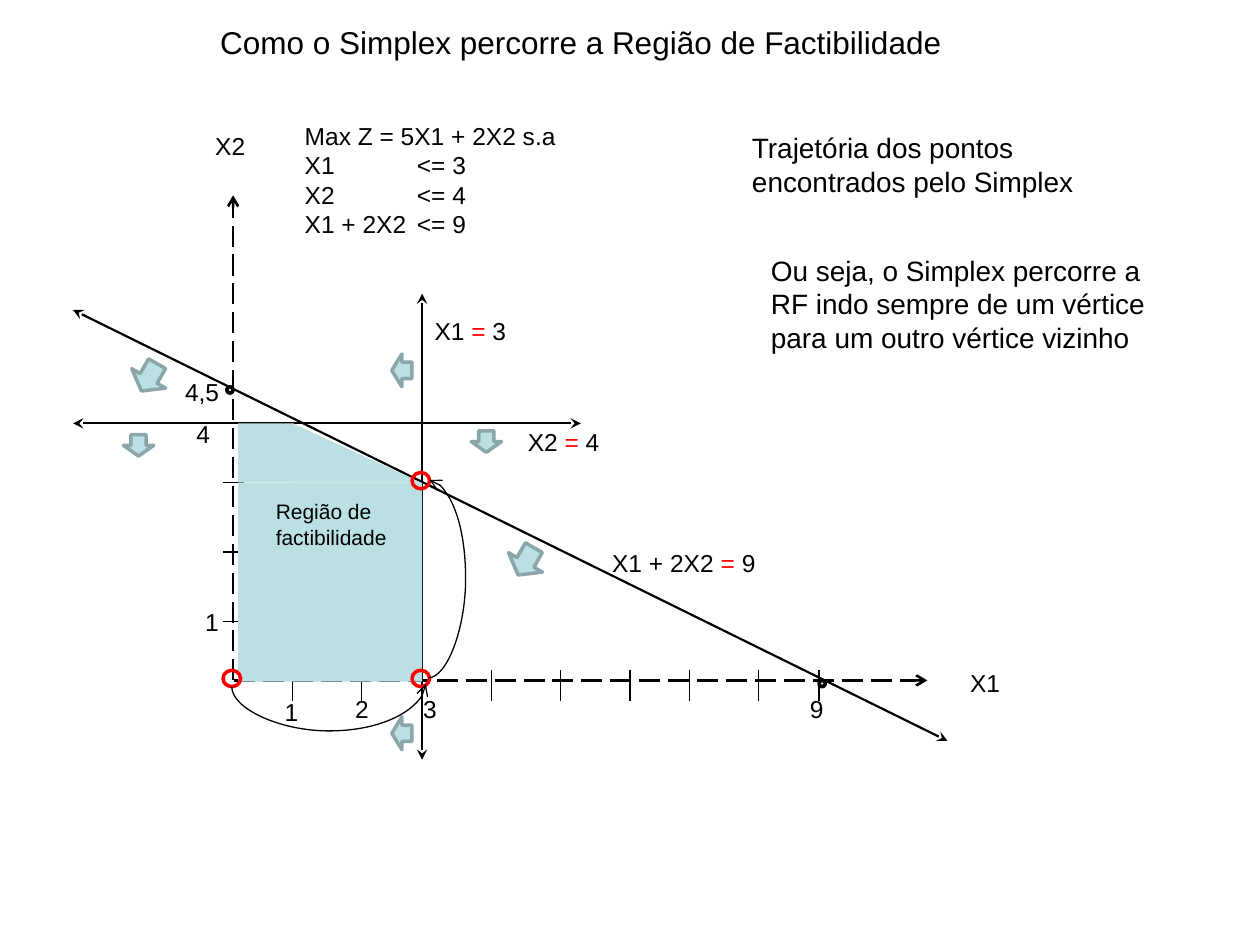
from lxml.etree import SubElement
from pptx import Presentation
from pptx.dml.color import RGBColor
from pptx.enum.dml import MSO_LINE
from pptx.enum.shapes import MSO_CONNECTOR, MSO_SHAPE
from pptx.enum.text import PP_ALIGN
from pptx.oxml.ns import qn
from pptx.util import Inches, Pt

BLACK, RED, AQUA, TEAL = "000000", "FF0000", "BBE0E3", "8AA6A8"

prs = Presentation()
prs.slide_width, prs.slide_height = Inches(10), Inches(7.5)
slide = prs.slides.add_slide(prs.slide_layouts[6])
rgb = RGBColor.from_string


def add_line(start, end, width, head=None, tail=None, kind=MSO_CONNECTOR.STRAIGHT):
    connector = slide.shapes.add_connector(kind, *map(Inches, (*start, *end)))
    connector.line.color.rgb = rgb(BLACK)
    connector.line.width = Pt(width)
    for tag, arrow in (("a:headEnd", head), ("a:tailEnd", tail)):
        if arrow:
            SubElement(connector.line._get_or_add_ln(), qn(tag), type=arrow)
    SubElement(connector._element.spPr, qn("a:effectLst"))
    return connector


def add_figure(preset, box, fill=None, outline=None):
    figure = slide.shapes.add_shape(preset, *map(Inches, box))
    figure.shadow.inherit = False
    if fill:
        figure.fill.solid()
        figure.fill.fore_color.rgb = rgb(fill)
    else:
        figure.fill.background()
    if outline:
        figure.line.color.rgb = rgb(outline)
        figure.line.width = Pt(2)
    else:
        figure.line.fill.background()
    return figure


for start, end in (((1.85, 5.4), (1.85, 1.55)), ((1.86, 5.4), (7.36, 5.4))):
    axis = add_line(start, end, 1.5, tail="arrow")
    axis.line.dash_style = MSO_LINE.LONG_DASH

for x in (2.32, 2.87, 3.35, 3.9, 4.45, 5, 5.47, 6.02, 6.5):
    add_line((x, 5.32), (x, 5.56), 0.75)
for y in (4.93, 4.38, 3.83, 3.36):
    add_line((1.77, y), (1.94, y), 0.75)

for start, end in (
    ((3.35, 2.33), (3.35, 6.03)),
    ((4.61, 3.36), (0.58, 3.36)),
    ((0.58, 2.46), (7.52, 5.88)),
):
    add_line(start, end, 1.25, "stealth", "stealth")

for left, top in ((1.8, 3.07), (6.5, 5.4)):
    add_figure(MSO_SHAPE.OVAL, (left, top, 0.05, 0.05), AQUA, BLACK)

for left, top in ((0.98, 3.45), (3.74, 3.42)):
    add_figure(MSO_SHAPE.DOWN_ARROW, (left, top, 0.24, 0.17), AQUA, TEAL)
for top in (2.81, 5.69):
    add_figure(MSO_SHAPE.LEFT_ARROW, (3.11, top, 0.16, 0.26), AQUA, TEAL)
for left, top in ((4.02, 4.33), (1.03, 2.87)):
    oblique = add_figure(MSO_SHAPE.DOWN_ARROW, (left, top, 0.31, 0.25), AQUA, TEAL)
    oblique.rotation = 29.8
    oblique.adjustments[1] = 0.46

for preset, box in (
    (MSO_SHAPE.RECTANGLE, (1.89, 3.83, 1.46, 1.58)),
    (MSO_SHAPE.RECTANGLE, (1.89, 3.36, 0.44, 0.47)),
    (MSO_SHAPE.RIGHT_TRIANGLE, (2.32, 3.36, 1.02, 0.47)),
):
    add_figure(preset, box, AQUA)

for left, top in ((1.77, 5.32), (3.27, 5.32), (3.27, 3.75)):
    add_figure(MSO_SHAPE.OVAL, (left, top, 0.14, 0.13), outline=RED)

for start, end, bend, turn in (
    ((2.62, 6.21), (2.6, 4.67), -1750000, 90),
    ((3.4, 5.38), (3.41, 3.81), 3000000, 0),
):
    path_step = add_line(start, end, 0.75, tail="arrow", kind=MSO_CONNECTOR.CURVE)
    properties = path_step._element.spPr
    properties.find(qn("a:xfrm")).set("rot", str(turn * 60000))
    guides = properties.find(qn("a:prstGeom")).get_or_add_avLst()
    SubElement(guides, qn("a:gd"), name="adj1", fmla=f"val {bend}")

texts = [
    ((7.6, 5.25, 0.55, 0.34), 14, ["X1"]),
    ((1.61, 0.99, 0.55, 0.34), 14, ["X2"]),
    ((2.32, 0.91, 2.6, 1.04), 14,
     ["Max Z = 5X1 + 2X2 s.a", "X1\t<= 3", "X2\t<= 4", "X1 + 2X2\t<= 9"]),
    ((2.16, 5.48, 0.32, 0.34), 14, ["1"]),
    ((2.72, 5.46, 0.32, 0.34), 14, ["2"]),
    ((3.26, 5.46, 0.32, 0.34), 14, ["3"]),
    ((6.33, 5.46, 0.32, 0.34), 14, ["9"]),
    ((1.53, 4.77, 0.32, 0.34), 14, ["1"]),
    ((1.46, 3.28, 0.32, 0.34), 14, ["4"]),
    ((1.37, 2.94, 0.48, 0.34), 14, ["4,5"]),
    ((2.09, 3.91, 1.08, 0.51), 12, ["Região de factibilidade"]),
    ((5.87, 0.99, 3.54, 0.64), 16, ["Trajetória dos pontos encontrados pelo Simplex"]),
    ((0.81, 0.13, 7.6, 0.4), 18, ["Como o Simplex percorre a Região de Factibilidade"]),
    ((6.02, 1.96, 3.39, 1.21), 16,
     ["Ou seja, o Simplex percorre a RF indo sempre de um vértice para um outro vértice vizinho"]),
]
for box, size, lines in texts:
    frame = slide.shapes.add_textbox(*map(Inches, box)).text_frame
    frame.word_wrap = True
    frame.text = "\n".join(lines)
    for paragraph in frame.paragraphs:
        paragraph.font.name = "Arial"
        paragraph.font.size = Pt(size)
        paragraph.font.color.rgb = rgb(BLACK)
        if size == 18:
            paragraph.alignment = PP_ALIGN.CENTER
        if "\t" in paragraph.text:
            stops = paragraph._p.get_or_add_pPr()
            tab_list = stops.makeelement(qn("a:tabLst"))
            SubElement(tab_list, qn("a:tab"), pos=str(Inches(0.89)), algn="l")
            stops.insert(0, tab_list)

for box, left_side, right_side in (
    ((3.35, 2.46, 0.99, 0.34), "X1 ", " 3"),
    ((4.09, 3.34, 0.99, 0.34), "X2 ", " 4"),
    ((4.76, 4.3, 1.42, 0.34), "X1 + 2X2 ", " 9"),
):
    frame = slide.shapes.add_textbox(*map(Inches, box)).text_frame
    frame.word_wrap = True
    equation = frame.paragraphs[0]
    equation.font.name = "Arial"
    equation.font.size = Pt(14)
    for part, color in ((left_side, BLACK), ("=", RED), (right_side, BLACK)):
        run = equation.add_run()
        run.text = part
        run.font.color.rgb = rgb(color)

prs.save("out.pptx")
